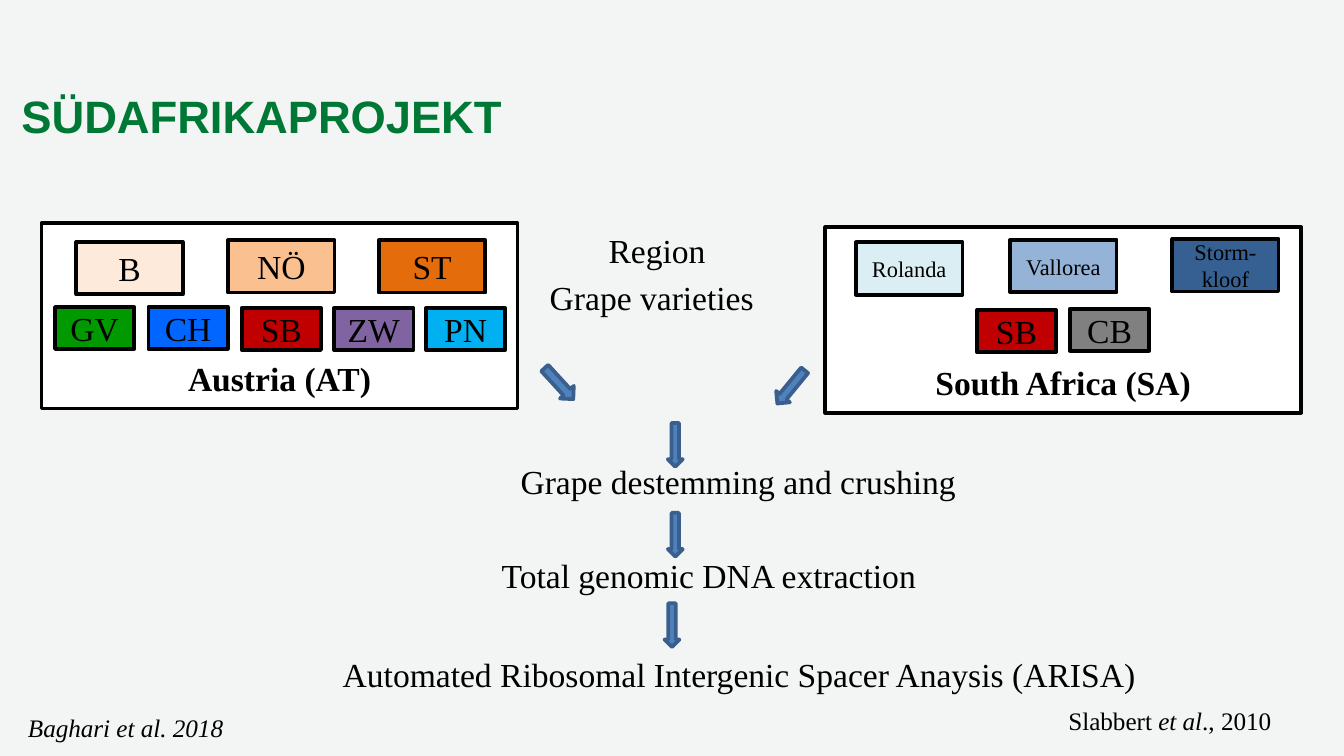
"""Build the study design slide comparing Austrian and South African grapes."""
from lxml import etree
from pptx import Presentation, util as u
from pptx.dml.color import RGBColor
from pptx.enum import shapes, text

COLORS = {
    "background": "F3F4F4", "title": "007835", "black": "000000", "white": "FFFFFF",
    "cream": "FDEADA", "peach": "FAC090", "orange": "E46C0A",
    "ice": "DBEEF4", "sky": "95B3D7", "navy": "376092",
    "green": "009900", "blue": "0066FF", "red": "C00000", "purple": "8064A2",
    "cyan": "00B0F0", "gray": "808080", "arrow": "4F81BD", "arrow edge": "3A5F8C",
}
SERIF = "Times New Roman"
LEFT, CENTER, RIGHT = text.PP_ALIGN.LEFT, text.PP_ALIGN.CENTER, text.PP_ALIGN.RIGHT

FRAME_SIZE = (255, 99.4)
FRAMES = [("Austria (AT)", 22.3, 119.5), ("South Africa (SA)", 442.1, 121.7)]

REGION_SIZE, VARIETY_SIZE = (57, 28.1), (42.5, 22.5)
CHIP_ROWS = [
    (REGION_SIZE, 18, [("B", "cream", 40.9, 129.6), ("NÖ", "peach", 122.2, 128.7),
                       ("ST", "orange", 203, 128.7)]),
    (REGION_SIZE, 12, [("Rolanda", "ice", 458.6, 129.8), ("Vallorea", "sky", 541.2, 128.5),
                       ("Storm-kloof", "navy", 628, 128.1)]),
    (VARIETY_SIZE, 18, [("GV", "green", 29.5, 164.5), ("CH", "blue", 79.5, 164.5),
                        ("SB", "red", 129.5, 165), ("ZW", "purple", 179, 165),
                        ("PN", "cyan", 228.2, 165)]),
    (VARIETY_SIZE, 18, [("SB", "red", 523.3, 166.2), ("CB", "gray", 573.2, 165.4)]),
]

ARROWS = [
    (294.5, 194.2, 10, 22.6, 317.5), (419, 195.8, 9.5, 23, 39.4),
    (357.8, 226.6, 8, 23.4, 0), (357.8, 274.8, 8, 23.4, 0), (356, 323.2, 8, 23.4, 0),
]

LABELS = [
    ([("SÜDAFRIKAPROJEKT", False)], 11.5, 47, 500, 24.3, LEFT),
    ([("Region", False)], 326, 123.2, 120, 18, LEFT),
    ([("Grape varieties", False)], 294.5, 148.6, 140, 18, LEFT),
    ([("Grape destemming and crushing", False)], 245.6, 247, 300, 18, CENTER),
    ([("Total genomic DNA extraction", False)], 229.8, 297.4, 300, 18, CENTER),
    ([("Automated Ribosomal Intergenic Spacer Anaysis (ARISA)", False)],
     183.6, 350.5, 460, 18, LEFT),
    ([("Baghari et al. 2018", True)], 15, 381.5, 250, 13.5, LEFT),
    ([("Slabbert ", False), ("et al", True), ("., 2010", False)], 481, 378, 200, 13.5, RIGHT),
]


def rgb(name):
    return RGBColor.from_string(COLORS[name])


def write(shape, runs, size, align, anchor, margins=(0, 0, 0, 0),
          font=SERIF, color="black", bold=False):
    frame = shape.text_frame
    frame.word_wrap = True
    frame.vertical_anchor = anchor
    (frame.margin_left, frame.margin_top,
     frame.margin_right, frame.margin_bottom) = map(u.Pt, margins)
    paragraph = frame.paragraphs[0]
    paragraph.alignment = align
    for words, italic in runs:
        run = paragraph.add_run()
        run.text = words
        run.font.name, run.font.size = font, u.Pt(size)
        run.font.bold, run.font.italic = bold, italic
        run.font.color.rgb = rgb(color)


def add_block(slide, kind, left, top, size, fill, line="black"):
    shape = slide.shapes.add_shape(kind, *map(u.Pt, (left, top, *size)))
    shape.shadow.inherit = False
    shape.fill.solid()
    shape.fill.fore_color.rgb = rgb(fill)
    shape.line.color.rgb = rgb(line)
    shape.line.width = u.Pt(2)
    return shape


def main():
    presentation = Presentation()
    presentation.slide_width, presentation.slide_height = u.Pt(720), u.Pt(405)
    slide = presentation.slides.add_slide(presentation.slide_layouts[6])
    slide.background.fill.solid()
    slide.background.fill.fore_color.rgb = rgb("background")
    rectangle, arrow = shapes.MSO_SHAPE.RECTANGLE, shapes.MSO_SHAPE.DOWN_ARROW

    for label, left, top in FRAMES:
        shape = add_block(slide, rectangle, left, top, FRAME_SIZE, "white")
        write(shape, [(label, False)], 18, CENTER, text.MSO_ANCHOR.BOTTOM,
              (0, 0, 0, 5.5), bold=True)

    for size, font_size, chips in CHIP_ROWS:
        for label, fill, left, top in chips:
            shape = add_block(slide, rectangle, left, top, size, fill)
            write(shape, [(label, False)], font_size, CENTER, text.MSO_ANCHOR.MIDDLE,
                  (4, 0, 4, 0))

    for left, top, width, height, rotation in ARROWS:
        shape = add_block(slide, arrow, left, top, (width, height), "arrow", "arrow edge")
        shape.rotation = rotation

    for index, (runs, left, top, width, size, align) in enumerate(LABELS):
        box = slide.shapes.add_textbox(*map(u.Pt, (left, top, width, size * 1.2)))
        style = {"font": "Arial", "color": "title", "bold": True} if index == 0 else {}
        write(box, runs, size, align, text.MSO_ANCHOR.TOP, **style)

    presentation.save("out.pptx")


if __name__ == "__main__":
    main()
